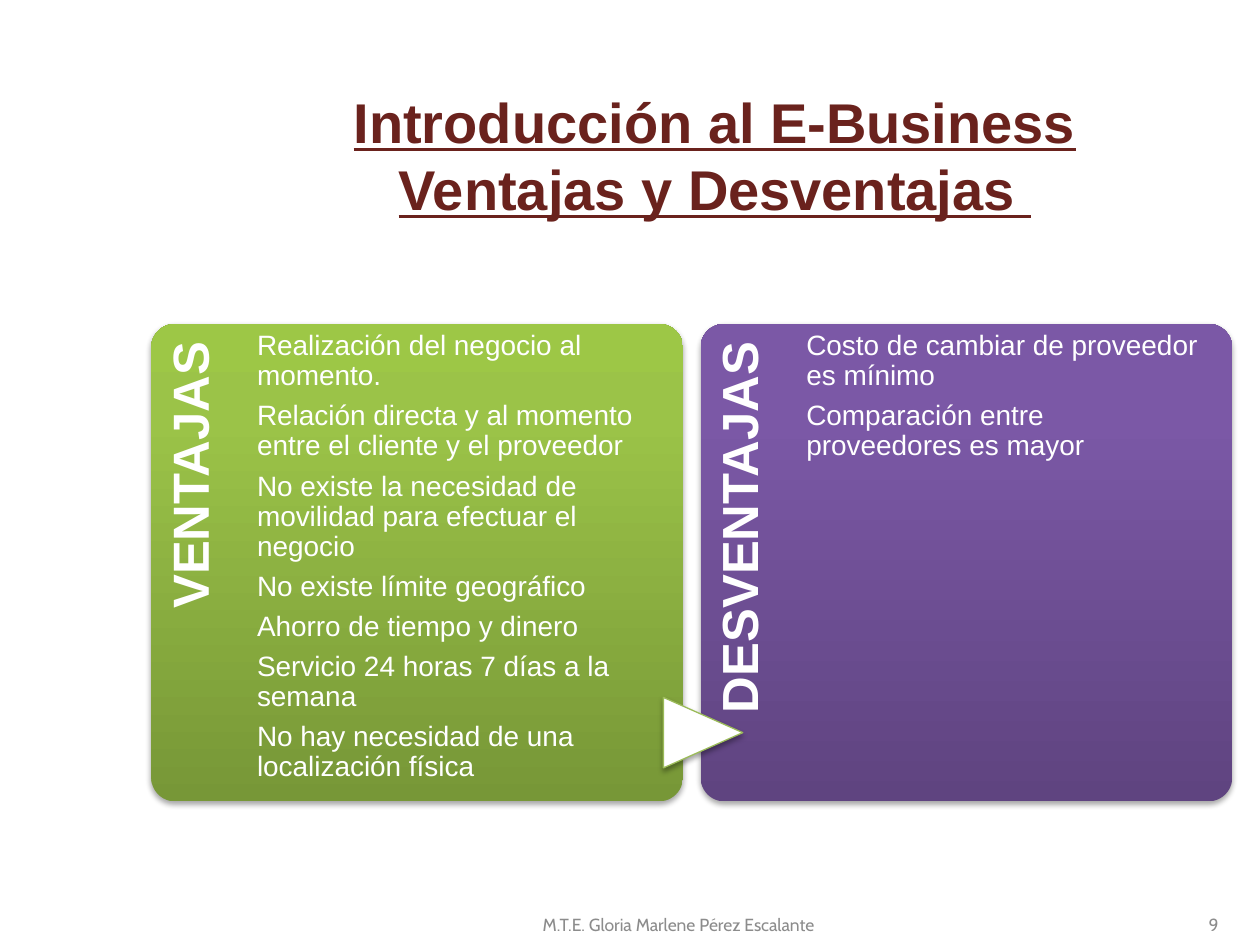
from copy import deepcopy
from dataclasses import dataclass

from lxml import etree
from pptx import Presentation
from pptx.dml.color import RGBColor
from pptx.enum.shapes import MSO_SHAPE
from pptx.enum.text import MSO_ANCHOR, PP_ALIGN
from pptx.oxml.ns import qn
from pptx.util import Inches, Pt

ROUNDED = MSO_SHAPE.ROUNDED_RECTANGLE
TRIANGLE = MSO_SHAPE.FLOWCHART_EXTRACT
LEFT, CENTER, RIGHT = PP_ALIGN.LEFT, PP_ALIGN.CENTER, PP_ALIGN.RIGHT
TOP, MIDDLE = MSO_ANCHOR.TOP, MSO_ANCHOR.MIDDLE

WHITE = RGBColor(0xFF, 0xFF, 0xFF)
MAROON = RGBColor(0x6A, 0x22, 0x1D)
GRAY = RGBColor(0x8C, 0x8C, 0x8C)
GREEN_LINE = RGBColor(0x9B, 0xBB, 0x59)
GREENS = (RGBColor(0x77, 0x97, 0x37), RGBColor(0x9B, 0xC3, 0x48), RGBColor(0x9D, 0xC7, 0x46))
PURPLES = (RGBColor(0x5F, 0x44, 0x80), RGBColor(0x7B, 0x58, 0xA6), RGBColor(0x7C, 0x57, 0xA8))
STOP_POSITIONS = (0, 0.8, 1)

PANEL_TOP, PANEL_WIDTH, PANEL_HEIGHT = 2.57, 4.22, 3.79
HEADING_LENGTH, HEADING_DEPTH = 3.11, 0.84
BODY_WIDTH = 3.14
LINE_SPACING, SPACE_AFTER = 0.9, 0.35


@dataclass
class TextStyle:
    size: float
    color: RGBColor
    font: str = "Arial"
    bold: bool = False
    underline: bool = False
    align: PP_ALIGN = LEFT
    anchor: MSO_ANCHOR = TOP
    tight: bool = False


@dataclass
class Panel:
    left: float
    heading: str
    points: list[str]
    colors: tuple[RGBColor, ...]


TITLE = TextStyle(32, MAROON, bold=True, underline=True, align=CENTER, anchor=MIDDLE)
FOOTER = TextStyle(10, GRAY, "Cabin", align=CENTER, anchor=MIDDLE)
PAGE_NUMBER = TextStyle(10, GRAY, "Cabin", align=RIGHT, anchor=MIDDLE)
HEADING = TextStyle(29, WHITE, bold=True, align=RIGHT, tight=True)
BODY = TextStyle(16, WHITE, tight=True)

PANELS = [
    Panel(1.2, "VENTAJAS", [
        "Realización del negocio al momento.",
        "Relación directa y al momento entre el cliente y el proveedor",
        "No existe la necesidad de movilidad para efectuar el negocio",
        "No existe límite geográfico",
        "Ahorro de tiempo y dinero",
        "Servicio 24 horas 7 días a la semana",
        "No hay necesidad de una localización física",
    ], GREENS),
    Panel(5.56, "DESVENTAJAS", [
        "Costo de cambiar de proveedor es mínimo",
        "Comparación entre proveedores es mayor",
    ], PURPLES),
]


def add_text(slide, box: tuple[float, ...], text: str, style: TextStyle,
             insets: tuple[float, ...] = (0.1, 0.05, 0.1, 0.05)):
    shape = slide.shapes.add_textbox(*map(Inches, box))
    frame = shape.text_frame
    frame.word_wrap = True
    frame.vertical_anchor = style.anchor
    (frame.margin_left, frame.margin_top,
     frame.margin_right, frame.margin_bottom) = map(Inches, insets)
    frame.text = text
    for paragraph in frame.paragraphs:
        paragraph.alignment = style.align
        if style.tight:
            paragraph.line_spacing = LINE_SPACING
            paragraph.space_after = Pt(style.size * SPACE_AFTER)
        for run in paragraph.runs:
            run.font.name = style.font
            run.font.size = Pt(style.size)
            run.font.bold = style.bold
            run.font.underline = style.underline
            run.font.color.rgb = style.color
    return shape


def add_shadow(shape) -> None:
    shape.shadow.inherit = False
    effects = shape._element.spPr.find(qn("a:effectLst"))
    shadow = etree.SubElement(effects, qn("a:outerShdw"), blurRad=str(Pt(3.1)),
                              dist=str(Pt(1.8)), dir="5400000", rotWithShape="0")
    color = etree.SubElement(shadow, qn("a:srgbClr"), val="000000")
    etree.SubElement(color, qn("a:alpha"), val="35000")


def fill_gradient(shape, colors: tuple[RGBColor, ...]) -> None:
    shape.fill.gradient()
    shape.fill.gradient_angle = 90
    stop_list = shape._element.spPr.find(qn("a:gradFill")).find(qn("a:gsLst"))
    stop_list.append(deepcopy(stop_list[-1]))
    for stop, position, color in zip(shape.fill.gradient_stops, STOP_POSITIONS, colors):
        stop.position = position
        stop.color.rgb = color


def add_panel(slide, panel: Panel) -> None:
    card = slide.shapes.add_shape(ROUNDED, Inches(panel.left), Inches(PANEL_TOP),
                                  Inches(PANEL_WIDTH), Inches(PANEL_HEIGHT))
    card.adjustments[0] = 0.05
    fill_gradient(card, panel.colors)
    card.line.fill.background()
    add_shadow(card)

    # The heading turns about its centre to stand at the panel's left edge
    shift = (HEADING_LENGTH - HEADING_DEPTH) / 2
    heading = add_text(slide, (panel.left - shift, PANEL_TOP + shift,
                               HEADING_LENGTH, HEADING_DEPTH),
                       panel.heading, HEADING, (0, 0.11, 0.14, 0))
    heading.rotation = 270

    add_text(slide, (panel.left + HEADING_DEPTH, PANEL_TOP, BODY_WIDTH, PANEL_HEIGHT),
             "\n".join(panel.points), BODY, (0, 0.06, 0, 0))


def add_arrow(slide) -> None:
    arrow = slide.shapes.add_shape(TRIANGLE, Inches(5.3), Inches(5.5),
                                   Inches(0.56), Inches(0.63))
    arrow.rotation = 90
    arrow.fill.solid()
    arrow.fill.fore_color.rgb = WHITE
    arrow.line.color.rgb = GREEN_LINE
    arrow.line.width = Pt(0.75)
    add_shadow(arrow)


def main() -> None:
    presentation = Presentation()
    presentation.slide_width, presentation.slide_height = Inches(10), Inches(7.5)
    slide = presentation.slides.add_slide(presentation.slide_layouts[6])

    # Title and footer
    add_text(slide, (1.85, 0.6, 7.65, 1.25),
             "Introducción al E-Business\vVentajas y Desventajas ", TITLE)
    add_text(slide, (3.8, 7.14, 3.17, 0.4), "M.T.E. Gloria Marlene Pérez Escalante", FOOTER)
    add_text(slide, (7.44, 7.14, 2.33, 0.4), "9", PAGE_NUMBER)

    # Panels and the arrow between them
    for panel in PANELS:
        add_panel(slide, panel)
    add_arrow(slide)

    presentation.save("out.pptx")


if __name__ == "__main__":
    main()
